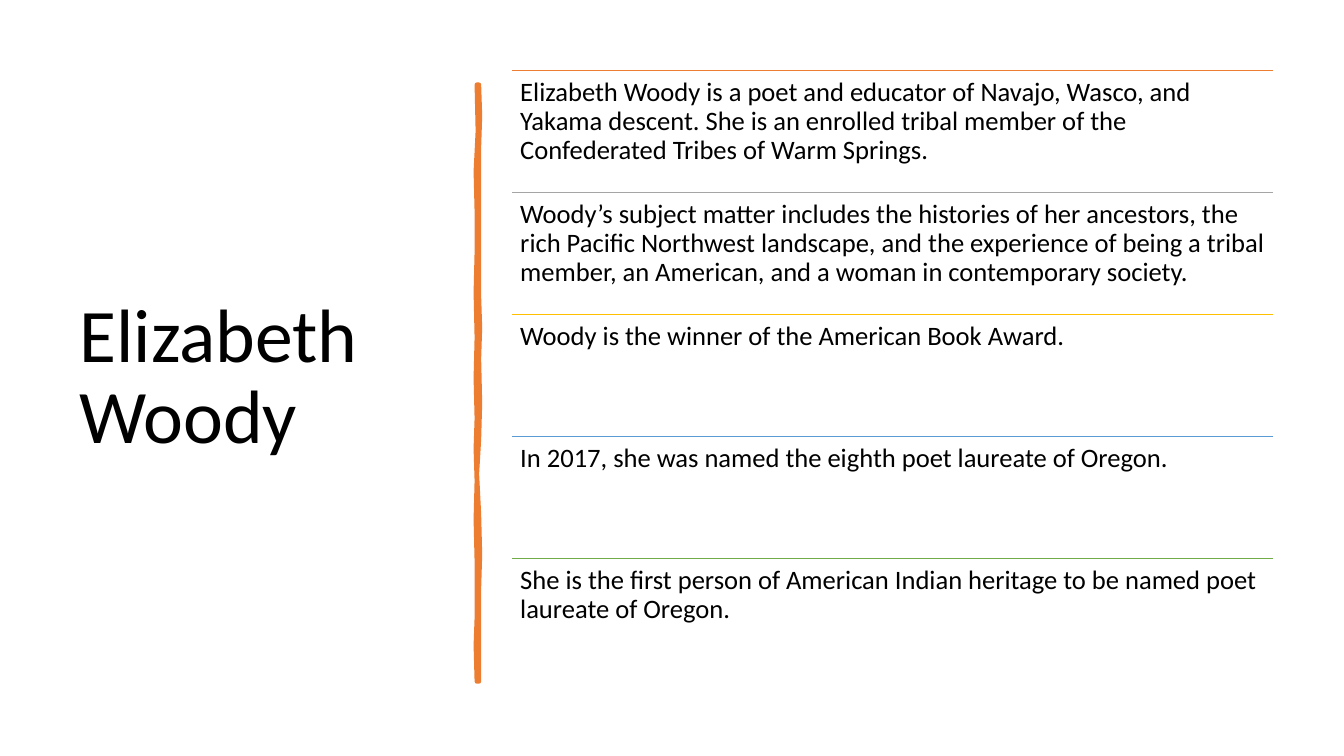
import pptx
import pptx.dml.color
import pptx.enum.shapes
import pptx.enum.text
import pptx.oxml.ns
import pptx.util
from lxml import etree

Inches = pptx.util.Inches
Pt = pptx.util.Pt

FONT = "Calibri"
BLACK = "000000"
ORANGE = "ED7D31"

# Facts about the poet, each with the colour of the rule above it
FACTS = [
    (ORANGE, "Elizabeth Woody is a poet and educator of Navajo, Wasco, and Yakama "
             "descent. She is an enrolled tribal member of the Confederated Tribes "
             "of Warm Springs."),
    ("A5A5A5", "Woody’s subject matter includes the histories of her ancestors, the "
               "rich Pacific Northwest landscape, and the experience of being a tribal "
               "member, an American, and a woman in contemporary society."),
    ("FFC000", "Woody is the winner of the American Book Award."),
    ("5B9BD5", "In 2017, she was named the eighth poet laureate of Oregon."),
    ("70AD47", "She is the first person of American Indian heritage to be named poet "
               "laureate of Oregon."),
]
FACT_LEFT, FACT_TOP, FACT_WIDTH, FACT_HEIGHT = 5.08, 0.7, 7.55, 1.21

# Outline of the hand-drawn divider: down the right edge, up the left edge
DIVIDER = [
    (4.75, 0.84), (4.76, 1.15), (4.75, 1.46), (4.75, 2.26), (4.75, 2.94),
    (4.76, 3.25), (4.75, 3.56), (4.76, 4.0), (4.75, 4.36), (4.73, 4.7),
    (4.75, 5.1), (4.76, 5.5), (4.75, 5.84), (4.75, 6.3), (4.75, 6.76),
    (4.73, 6.76), (4.72, 6.4), (4.73, 6.13), (4.73, 5.57), (4.72, 5.15),
    (4.73, 4.77), (4.72, 4.45), (4.73, 4.15), (4.72, 3.75), (4.73, 3.35),
    (4.72, 2.9), (4.73, 2.5), (4.73, 2.1), (4.72, 1.7), (4.74, 1.3),
    (4.73, 0.84),
]


def rgb(color):
    return pptx.dml.color.RGBColor.from_string(color)


def add_text(slide, text, left, top, width, height, size=19, color=BLACK,
             inset=0.08, anchor=pptx.enum.text.MSO_ANCHOR.TOP):
    box = slide.shapes.add_textbox(Inches(left), Inches(top),
                                   Inches(width), Inches(height))
    frame = box.text_frame
    frame.word_wrap = True
    frame.vertical_anchor = anchor
    frame.margin_left = frame.margin_right = Inches(inset)
    frame.margin_top = frame.margin_bottom = Inches(inset)
    para = frame.paragraphs[0]
    para.line_spacing = 0.9
    span = para.add_run()
    span.text = text
    span.font.name = FONT
    span.font.size = Pt(size)
    span.font.color.rgb = rgb(color)


def add_rule(slide, left, top, width, color):
    rule = slide.shapes.add_connector(
        pptx.enum.shapes.MSO_CONNECTOR.STRAIGHT,
        Inches(left), Inches(top), Inches(left + width), Inches(top))
    rule.line.color.rgb = rgb(color)
    rule.line.width = Pt(1)
    # An empty effect list removes the theme shadow
    etree.SubElement(rule._element.spPr, pptx.oxml.ns.qn("a:effectLst"))


def add_divider(slide, points, color):
    corners = [(Inches(x), Inches(y)) for x, y in points]
    builder = slide.shapes.build_freeform(*corners[0])
    builder.add_line_segments(corners[1:], close=True)
    divider = builder.convert_to_shape()
    divider.shadow.inherit = False
    divider.fill.solid()
    divider.fill.fore_color.rgb = rgb(color)
    divider.line.color.rgb = rgb(color)
    divider.line.width = Pt(3.25)
    # Rounded corners give the brush-like ends
    etree.SubElement(divider.line._get_or_add_ln(), pptx.oxml.ns.qn("a:round"))


def main():
    deck = pptx.Presentation()
    deck.slide_width = Inches(13.33)
    deck.slide_height = Inches(7.5)
    page = deck.slides.add_slide(deck.slide_layouts[6])

    # Title and divider
    add_text(page, "Elizabeth Woody", 0.69, 0.7, 3.74, 6.11, size=54, inset=0.1,
             anchor=pptx.enum.text.MSO_ANCHOR.MIDDLE)
    add_divider(page, DIVIDER, ORANGE)

    # Facts, one row each
    for row, (color, fact) in enumerate(FACTS):
        top = FACT_TOP + row * FACT_HEIGHT
        add_rule(page, FACT_LEFT, top, FACT_WIDTH, color)
        add_text(page, fact, FACT_LEFT, top, FACT_WIDTH, FACT_HEIGHT)

    deck.save("out.pptx")


if __name__ == "__main__":
    main()
